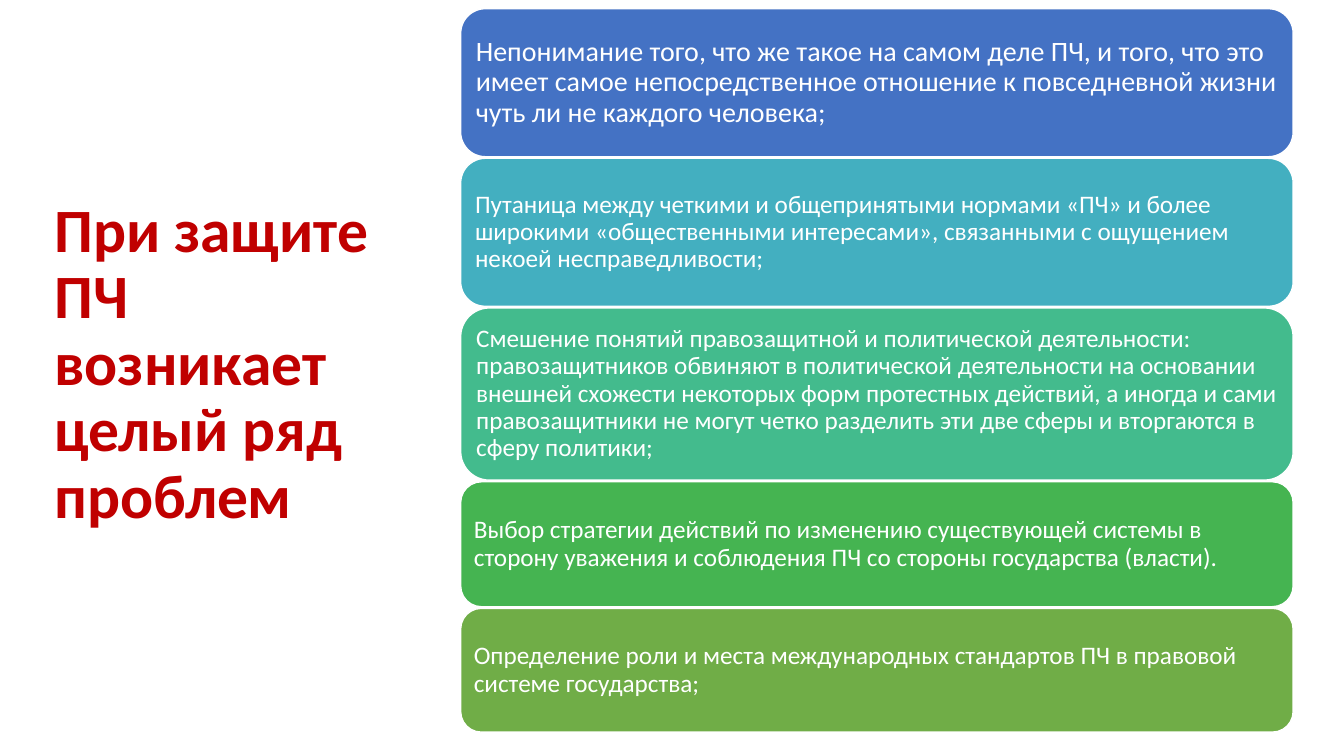
"""Build a slide listing the problems met in defending human rights."""
from pptx import Presentation
from pptx.dml.color import RGBColor
from pptx.enum.shapes import MSO_SHAPE
from pptx.enum.text import MSO_ANCHOR, PP_ALIGN
from pptx.util import Cm, Pt

ROUNDED = MSO_SHAPE.ROUNDED_RECTANGLE
MIDDLE = MSO_ANCHOR.MIDDLE
LEFT = PP_ALIGN.LEFT

HEADING = "При защите ПЧ возникает целый ряд проблем"
PROBLEMS = [
    ("Непонимание того, что же такое на самом деле ПЧ, и того, что это имеет "
     "самое непосредственное отношение к повседневной жизни чуть ли не каждого человека;",
     3.73, "4472C4", 20),
    ("Путаница между четкими и общепринятыми нормами «ПЧ» и более широкими "
     "«общественными интересами», связанными с ощущением некоей несправедливости;",
     3.73, "43AFC0", 18),
    ("Смешение понятий правозащитной и политической деятельности: правозащитников "
     "обвиняют в политической деятельности на основании внешней схожести некоторых "
     "форм протестных действий, а иногда и сами правозащитники не могут четко "
     "разделить эти две сферы и вторгаются в сферу политики;",
     4.34, "43BB8D", 18),
    ("Выбор стратегии действий по изменению существующей системы в сторону уважения "
     "и соблюдения ПЧ со стороны государства (власти).",
     3.15, "45B451", 18),
    ("Определение роли и места международных стандартов ПЧ в правовой системе государства;",
     3.12, "70AD47", 18),
]
THEME = {
    "font": "Calibri",
    "heading": "C00000",
    "light": "FFFFFF",
    "heading_size": 44,
    "line_spacing": 0.9,
    "after_ratio": 0.35,
    "inset_per_pt": 0.01,
}
CARD_LEFT, CARD_TOP, CARD_WIDTH, CARD_GAP = 11.61, 0.22, 20.98, 0.04


def write(frame, text, size, color, bold=False):
    frame.word_wrap = True
    frame.vertical_anchor = MIDDLE
    frame.text = text
    paragraph = frame.paragraphs[0]
    paragraph.alignment = LEFT
    paragraph.line_spacing = THEME["line_spacing"]
    font = paragraph.runs[0].font
    font.name = THEME["font"]
    font.size = Pt(size)
    font.bold = bold
    font.color.rgb = RGBColor.from_string(color)
    return paragraph


def add_card(slide, top, text, height, color, size):
    card = slide.shapes.add_shape(
        ROUNDED, Cm(CARD_LEFT), Cm(top), Cm(CARD_WIDTH), Cm(height))
    card.shadow.inherit = False
    card.fill.solid()
    card.fill.fore_color.rgb = RGBColor.from_string(color)
    card.line.color.rgb = RGBColor.from_string(THEME["light"])
    card.line.width = Pt(1)
    frame = card.text_frame
    inset = Cm(size * THEME["inset_per_pt"])
    frame.margin_left = frame.margin_right = inset
    frame.margin_top = frame.margin_bottom = inset
    paragraph = write(frame, text, size, THEME["light"])
    paragraph.space_after = Pt(size * THEME["after_ratio"])


def main():
    deck = Presentation()
    deck.slide_width, deck.slide_height = Cm(33.87), Cm(19.05)
    slide = deck.slides.add_slide(deck.slide_layouts[6])

    heading = slide.shapes.add_textbox(Cm(1.12), Cm(0.91), Cm(8.71), Cm(16.59))
    write(heading.text_frame, HEADING, THEME["heading_size"], THEME["heading"], bold=True)

    top = CARD_TOP
    for text, height, color, size in PROBLEMS:
        add_card(slide, top, text, height, color, size)
        top += height + CARD_GAP

    deck.save("out.pptx")


if __name__ == "__main__":
    main()
